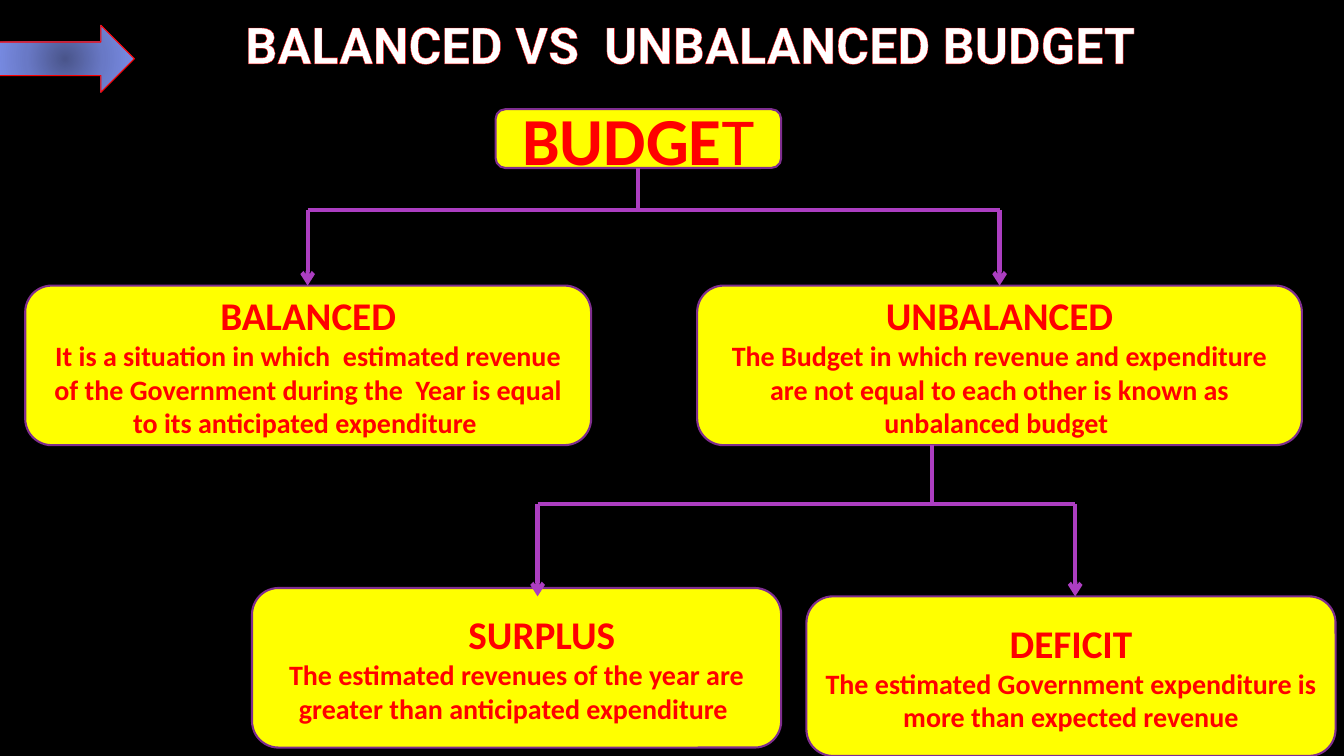
from dataclasses import dataclass

from lxml import etree
from pptx import Presentation
from pptx import util as u
from pptx.dml.color import RGBColor
from pptx.enum import shapes, text
from pptx.oxml.ns import nsdecls, qn

TITLE = "BALANCED VS  UNBALANCED BUDGET"
TITLE_AT = (224, 8, 1440, 68)
ARROW_AT = (-4, 24, 132, 64)

# heading, body, (left, top, width, height), heading indent
BOXES = [
    ("BALANCED",
     "It is a situation in which  estimated revenue of the Government during "
     "the  Year is equal to its anticipated expenditure ",
     (24, 272, 539, 152), 0),
    ("UNBALANCED",
     "The Budget in which revenue and expenditure are not equal to each other "
     "is known as unbalanced budget ",
     (664, 272, 576, 152), 0),
    ("SURPLUS",
     "The estimated revenues of the year are greater than anticipated expenditure ",
     (240, 560, 504, 152), 48),
    ("DEFICIT",
     "The estimated Government expenditure is more than expected revenue",
     (768, 568, 504, 152), 0),
]
ROOT = (("BUDGE", True), ("T", False))
ROOT_AT = (472, 104, 272, 56)

# stem x, stem top, rail y, branch bottom, (left branch x, right branch x)
FORKS = [
    (608, 160, 200, 272, (293, 952)),
    (888, 424, 480, 568, (512, 1024)),
]


@dataclass(frozen=True)
class Theme:
    background: str = "000000"
    box: str = "FFFF00"
    border: str = "7F2E8F"
    connector: str = "AC3EC1"
    ink: str = "FF0000"
    title: str = "FFFFFF"
    gradient: tuple = ((0, "4A558B"), (50, "6979C6"), (100, "7C90EB"))
    title_font: str = "Roboto"
    font: str = "Calibri"
    title_size: int = 36
    root_size: int = 48
    heading_size: int = 28
    body_size: int = 20


THEME = Theme()


def px(value):
    return u.Emu(value * 9525)


def rgb(value):
    return RGBColor.from_string(value)


def format_run(run, size, color=THEME.ink, font=THEME.font, bold=True, outline=None):
    run.font.size = u.Pt(size)
    run.font.name = font
    run.font.bold = bold
    run.font.color.rgb = rgb(color)
    if outline:
        run.font.fill._xPr.insert(0, etree.fromstring(
            f'<a:ln {nsdecls("a")} w="9525"><a:solidFill>'
            f'<a:srgbClr val="{outline}"/></a:solidFill></a:ln>'))


def add_box(slide, at):
    """Add a rounded yellow box and return its text frame."""
    shape = slide.shapes.add_shape(
        shapes.MSO_SHAPE.ROUNDED_RECTANGLE, *map(px, at))
    shape.shadow.inherit = False
    shape.fill.solid()
    shape.fill.fore_color.rgb = rgb(THEME.box)
    shape.line.color.rgb = rgb(THEME.border)
    shape.line.width = u.Pt(1.5)
    frame = shape.text_frame
    frame.word_wrap = True
    frame.vertical_anchor = text.MSO_ANCHOR.MIDDLE
    return frame


def add_root(slide):
    paragraph = add_box(slide, ROOT_AT).paragraphs[0]
    paragraph.alignment = text.PP_ALIGN.CENTER
    for wording, bold in ROOT:
        run = paragraph.add_run()
        run.text = wording
        format_run(run, THEME.root_size, bold=bold, outline=THEME.background)


def add_definition(slide, heading, body, at, indent):
    frame = add_box(slide, at)
    frame.text = f"{heading}\n{body}"
    styles = ((THEME.heading_size, THEME.background), (THEME.body_size, None))
    for paragraph, (size, outline) in zip(frame.paragraphs, styles):
        paragraph.alignment = text.PP_ALIGN.CENTER
        format_run(paragraph.runs[0], size, outline=outline)
    if indent:
        frame.paragraphs[0]._p.get_or_add_pPr().set("marL", str(px(indent)))


def add_line(slide, start, end, arrow=False):
    connector = slide.shapes.add_connector(
        shapes.MSO_CONNECTOR.STRAIGHT, *map(px, start + end))
    connector.line.color.rgb = rgb(THEME.connector)
    connector.line.width = u.Pt(3)
    if arrow:
        etree.SubElement(connector.line._get_or_add_ln(), qn("a:tailEnd"), type="arrow")
    etree.SubElement(connector._element.spPr, qn("a:effectLst"))


def add_fork(slide, stem, top, rail, bottom, branches):
    left, right = branches
    add_line(slide, (stem, top), (stem, rail))
    add_line(slide, (left, rail), (right, rail))
    for branch in branches:
        add_line(slide, (branch, rail), (branch, bottom), arrow=True)


def add_title(slide):
    title = slide.shapes.title
    title.left, title.top, title.width, title.height = map(px, TITLE_AT)
    frame = title.text_frame
    frame.text = TITLE
    frame.word_wrap = True
    frame.vertical_anchor = text.MSO_ANCHOR.TOP
    frame.paragraphs[0].alignment = text.PP_ALIGN.LEFT
    format_run(frame.paragraphs[0].runs[0], THEME.title_size, THEME.title,
               THEME.title_font, outline=THEME.ink)


def add_title_arrow(slide):
    arrow = slide.shapes.add_shape(shapes.MSO_SHAPE.RIGHT_ARROW, *map(px, ARROW_AT))
    arrow.line.color.rgb = rgb(THEME.ink)
    arrow.line.width = u.Pt(0.75)
    arrow.fill.background()
    properties = arrow._element.spPr
    stops = "".join(
        f'<a:gs pos="{position * 1000}"><a:srgbClr val="{color}"/></a:gs>'
        for position, color in THEME.gradient)
    properties.replace(properties.find(qn("a:noFill")), etree.fromstring(
        f'<a:gradFill {nsdecls("a")} rotWithShape="1"><a:gsLst>{stops}</a:gsLst>'
        '<a:path path="circle"><a:fillToRect l="50000" t="50000" r="50000" '
        'b="50000"/></a:path></a:gradFill>'))
    properties.append(etree.fromstring(
        f'<a:effectLst {nsdecls("a")}><a:outerShdw blurRad="{u.Pt(5)}" '
        f'dist="{u.Pt(3)}" dir="5400000" rotWithShape="0"><a:srgbClr '
        f'val="{THEME.background}"><a:alpha val="65000"/></a:srgbClr>'
        '</a:outerShdw></a:effectLst>'))


def main():
    presentation = Presentation()
    presentation.slide_width, presentation.slide_height = px(1280), px(720)
    slide = presentation.slides.add_slide(presentation.slide_layouts[5])
    slide.background.fill.solid()
    slide.background.fill.fore_color.rgb = rgb(THEME.background)
    add_title(slide)
    add_root(slide)
    for box in BOXES:
        add_definition(slide, *box)
    for fork in FORKS:
        add_fork(slide, *fork)
    add_title_arrow(slide)
    presentation.save("out.pptx")


if __name__ == "__main__":
    main()
